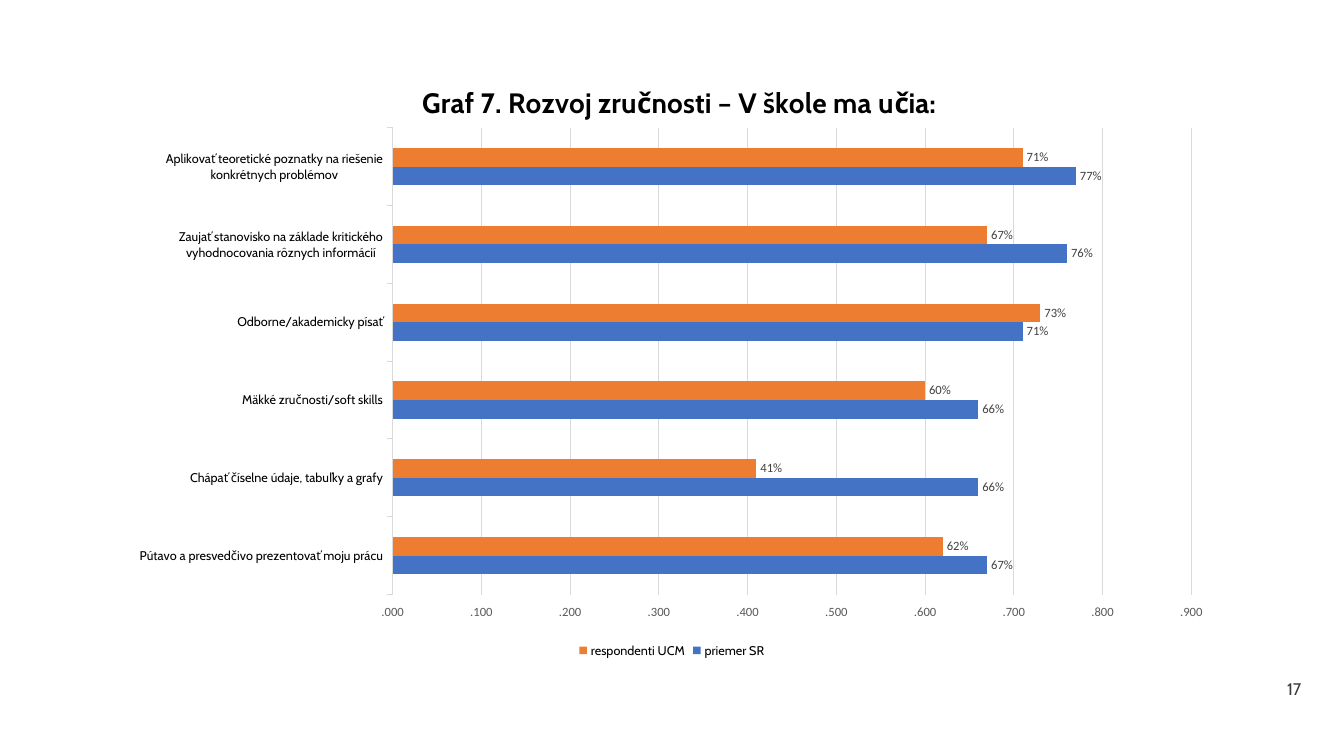
"""Build the slide with the bar chart on skills taught at school."""
from lxml.etree import SubElement
from pptx import Presentation
from pptx.chart.data import CategoryChartData
from pptx.dml.color import RGBColor
from pptx.enum.chart import XL_CHART_TYPE, XL_LABEL_POSITION, XL_LEGEND_POSITION, XL_TICK_MARK
from pptx.enum.text import MSO_ANCHOR, PP_ALIGN
from pptx.oxml.ns import qn
from pptx.util import Pt

TITLE = "Graf 7. Rozvoj zručnosti – V škole ma učia:"
PAGE_NUMBER = "17"
SKILLS = [
    ("Pútavo a presvedčivo prezentovať moju prácu", 0.67, 0.62),
    ("Chápať číselne údaje, tabuľky a grafy", 0.66, 0.41),
    ("Mäkké zručnosti/soft skills", 0.66, 0.60),
    ("Odborne/akademicky písať", 0.71, 0.73),
    ("Zaujať stanovisko na základe kritického vyhodnocovania rôznych informácií", 0.76, 0.67),
    ("Aplikovať teoretické poznatky na riešenie konkrétnych problémov", 0.77, 0.71),
]

BLACK = RGBColor(0x00, 0x00, 0x00)
DARK = RGBColor(0x40, 0x40, 0x40)
GREY = RGBColor(0x59, 0x59, 0x59)
LIGHT = RGBColor(0xD9, 0xD9, 0xD9)
BROWN = RGBColor(0x3D, 0x39, 0x35)
BLUE = RGBColor(0x44, 0x72, 0xC4)
ORANGE = RGBColor(0xED, 0x7D, 0x31)
SERIES = [("priemer SR", BLUE), ("respondenti UCM", ORANGE)]


def set_font(font, name, size, color, bold=False):
    font.name, font.size, font.bold = name, Pt(size), bold
    font.color.rgb = color


def set_layout(parent, position, **settings):
    """Place a chart part by fractions of the chart area."""
    for old in parent.findall(qn("c:layout")):
        parent.remove(old)
    layout = SubElement(parent, qn("c:layout"))
    manual = SubElement(layout, qn("c:manualLayout"))
    for tag, value in settings.items():
        SubElement(manual, qn(f"c:{tag}")).set("val", str(value))
    parent.insert(position, layout)


def add_skill_chart(page):
    data = CategoryChartData(number_format="0%")
    names, *columns = zip(*SKILLS)
    data.categories = names
    for (name, _), values in zip(SERIES, columns):
        data.add_series(name, values)
    chart = page.shapes.add_chart(
        XL_CHART_TYPE.BAR_CLUSTERED, Pt(84.24), Pt(38.16), Pt(791.28), Pt(434.88), data).chart
    set_font(chart.font, "Calibri", 10, BLACK)

    para = chart.chart_title.text_frame.paragraphs[0]
    para.text = TITLE
    set_font(para.font, "Cabin", 20, BLACK, True)
    chart.chart_title.include_in_layout = False
    set_layout(chart.chart_title._element, 1, xMode="edge", yMode="edge", x=0.27, y=0.04)

    chart.has_legend = True
    chart.legend.position = XL_LEGEND_POSITION.BOTTOM
    chart.legend.include_in_layout = False
    set_font(chart.legend.font, "Cabin", 9, BLACK)

    plot = chart.plots[0]
    plot.gap_width, plot.overlap, plot.vary_by_categories = 219, 0, False
    for series, (_, color) in zip(plot.series, SERIES):
        series.format.fill.solid()
        series.format.fill.fore_color.rgb = color
        series.invert_if_negative = False
        labels = series.data_labels
        labels.show_value = True
        labels.position = XL_LABEL_POSITION.OUTSIDE_END
        labels.number_format, labels.number_format_is_linked = "0%", False
        set_font(labels.font, "Calibri", 9, DARK)
    set_layout(chart._chartSpace.chart.plotArea, 0, layoutTarget="inner", xMode="edge",
               yMode="edge", x=0.248, y=0.122, w=0.721, h=0.767)

    skills = chart.category_axis
    skills.major_tick_mark = XL_TICK_MARK.OUTSIDE
    skills.format.line.color.rgb, skills.format.line.width = LIGHT, Pt(0.75)
    set_font(skills.tick_labels.font, "Cabin", 9, BLACK)

    shares = chart.value_axis
    shares.minimum_scale, shares.maximum_scale, shares.major_unit = 0, 0.9, 0.1
    shares.major_tick_mark = XL_TICK_MARK.OUTSIDE
    shares.format.line.fill.background()
    grid = shares.major_gridlines.format.line
    grid.color.rgb, grid.width = LIGHT, Pt(0.75)
    ticks = shares.tick_labels
    ticks.number_format, ticks.number_format_is_linked = r"#.##0;\-#.##0", False
    set_font(ticks.font, "Calibri", 9, GREY)


def add_page_number(page):
    box = page.shapes.add_textbox(Pt(882), Pt(480.24), Pt(54.72), Pt(23.04))
    frame = box.text_frame
    frame.word_wrap, frame.vertical_anchor = True, MSO_ANCHOR.MIDDLE
    para = frame.paragraphs[0]
    para.text, para.alignment = PAGE_NUMBER, PP_ALIGN.RIGHT
    set_font(para.font, "Cabin", 12, BROWN)


def main():
    deck = Presentation()
    deck.slide_width, deck.slide_height = Pt(960), Pt(540)
    page = deck.slides.add_slide(deck.slide_layouts[6])
    add_skill_chart(page)
    add_page_number(page)
    deck.save("out.pptx")


if __name__ == "__main__":
    main()
